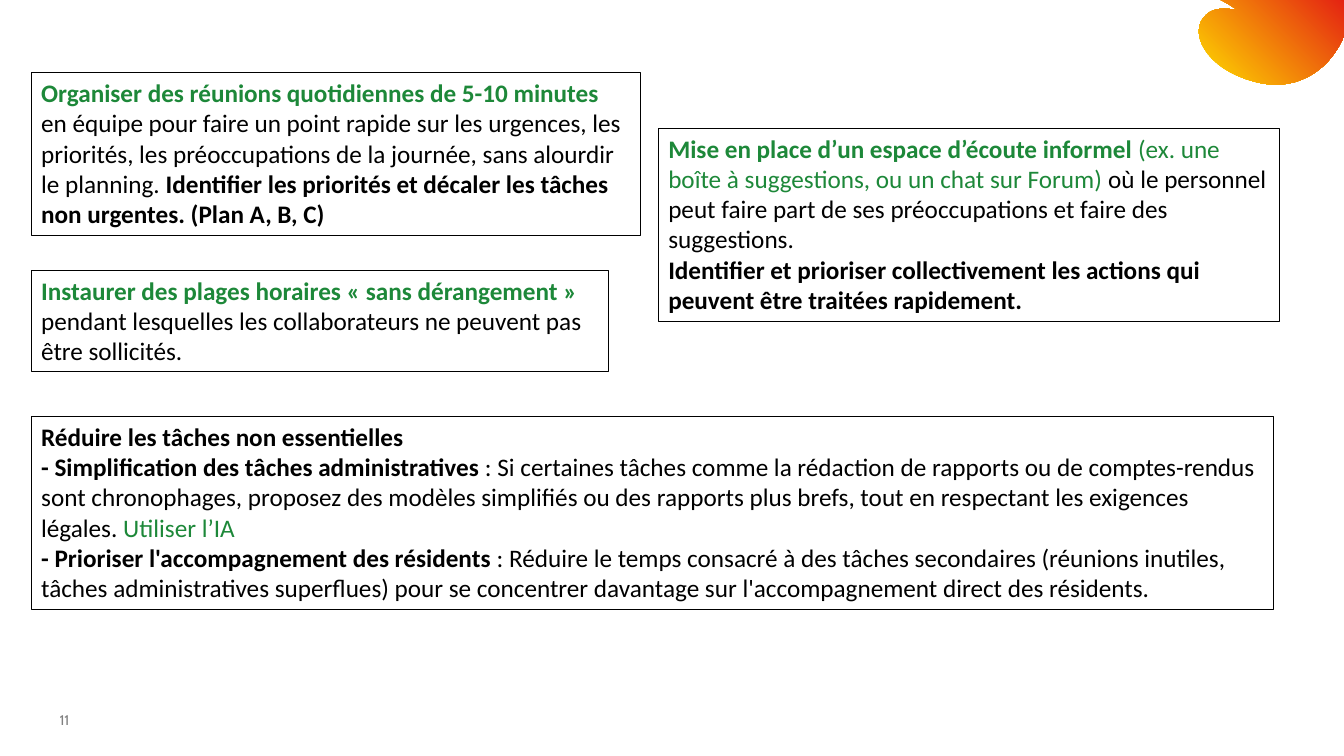
from pptx import Presentation
from pptx import util as u
from pptx.dml.color import RGBColor
from pptx.enum import shapes, text

BLACK = RGBColor(0x00, 0x00, 0x00)
GREEN = RGBColor(0x1D, 0x88, 0x39)
GREY = RGBColor(0x80, 0x80, 0x80)
YELLOW = RGBColor(0xFF, 0xDD, 0x00)
RED = RGBColor(0xE4, 0x23, 0x12)

PLAIN = {"bold": False, "color": BLACK}
STRONG = {"bold": True, "color": BLACK}
GREEN_PLAIN = {"bold": False, "color": GREEN}
GREEN_STRONG = {"bold": True, "color": GREEN}

LEFT = 0.31

# Boxes: position and size, then paragraphs of (text, format)
BOXES = [
    ((LEFT, 0.72, 6.04, 1.62), [
        [("Organiser des réunions quotidiennes de 5-10 minutes", GREEN_STRONG),
         (" en équipe pour faire un point rapide sur les urgences, les priorités, "
          "les préoccupations de la journée, sans alourdir le planning. ", PLAIN),
         ("Identifier les priorités et décaler les tâches non urgentes. "
          "(Plan A, B, C)", STRONG)],
    ]),
    ((LEFT, 4.13, 12.32, 1.92), [
        [("Réduire les tâches non essentielles", STRONG)],
        [("- Simplification des tâches administratives", STRONG),
         (" : Si certaines tâches comme la rédaction de rapports ou de "
          "comptes-rendus sont chronophages, proposez des modèles simplifiés ou des "
          "rapports plus brefs, tout en respectant les exigences légales. ", PLAIN),
         ("Utiliser l’IA", GREEN_PLAIN)],
        [("- Prioriser l'accompagnement des résidents", STRONG),
         (" : Réduire le temps consacré à des tâches secondaires (réunions inutiles, "
          "tâches administratives superflues) pour se concentrer davantage sur "
          "l'accompagnement direct des résidents.", PLAIN)],
    ]),
    ((6.53, 1.27, 6.16, 1.92), [
        [("Mise en place d’un espace d’écoute informel", GREEN_STRONG),
         (" (ex. une boîte à suggestions, ou un chat sur Forum) ", GREEN_PLAIN),
         ("où le personnel peut faire part de ses préoccupations et faire des "
          "suggestions.", PLAIN)],
        [("Identifier et prioriser collectivement les actions qui peuvent être "
          "traitées rapidement.", STRONG)],
    ]),
    ((LEFT, 2.68, 5.73, 1.01), [
        [("Instaurer des plages horaires « sans dérangement » ", GREEN_STRONG),
         ("pendant lesquelles les collaborateurs ne peuvent pas être sollicités.",
          PLAIN)],
    ]),
]

# Corner petal: straight points, then cubic curves (two controls and an end)
PETAL_START = (12.11, 0)
PETAL_EDGE = [(13.33, 0), (13.33, 0.35), (13.31, 0.4)]
PETAL_CURVES = [
    [(13.16, 0.72), (12.83, 0.92), (12.44, 0.81)],
    [(11.95, 0.68), (11.78, 0.31), (11.96, 0.15)],
    [(12.03, 0.08), (12.14, 0.07), (12.32, 0.11)],
    [(12.28, 0.1), (12.24, 0.08), (12.2, 0.05)],
]


def curve_points(start, first, second, end, steps=16):
    """Points along a cubic curve, without its start."""
    points = []
    for step in range(1, steps + 1):
        t = step / steps
        weights = ((1 - t) ** 3, 3 * t * (1 - t) ** 2, 3 * t * t * (1 - t), t ** 3)
        corners = (start, first, second, end)
        points.append(tuple(sum(w * c[axis] for w, c in zip(weights, corners))
                            for axis in (0, 1)))
    return points


class Page:
    """The current slide and its text style."""

    def __init__(self, deck):
        self.shapes = deck.slides.add_slide(deck.slide_layouts[6]).shapes
        self.style = {"name": "Calibri", "size": u.Pt(18)}

    def fill_text(self, frame, paragraphs, frame_format):
        for name, value in frame_format.items():
            setattr(frame, name, value)
        for index, pieces in enumerate(paragraphs):
            para = frame.add_paragraph() if index else frame.paragraphs[0]
            para.alignment = text.PP_ALIGN.LEFT
            for words, look in pieces:
                span = para.add_run()
                span.text = words
                values = {**self.style, **look}
                span.font.color.rgb = values.pop("color")
                for name, value in values.items():
                    setattr(span.font, name, value)

    def box(self, place, paragraphs):
        box = self.shapes.add_shape(shapes.MSO_SHAPE.RECTANGLE, *map(u.Inches, place))
        box.shadow.inherit = False
        box.fill.background()
        box.line.color.rgb = BLACK
        box.line.width = u.Pt(0.75)
        self.fill_text(box.text_frame, paragraphs, {
            "word_wrap": True,
            "vertical_anchor": text.MSO_ANCHOR.TOP,
            "auto_size": text.MSO_AUTO_SIZE.SHAPE_TO_FIT_TEXT,
        })

    def number(self, place, words):
        box = self.shapes.add_textbox(*map(u.Inches, place))
        margins = dict.fromkeys(
            ("margin_left", "margin_top", "margin_right", "margin_bottom"), 0)
        look = {"name": "Cabin", "size": u.Pt(10), "color": GREY}
        self.fill_text(box.text_frame, [[(words, look)]], {
            "word_wrap": True, "vertical_anchor": text.MSO_ANCHOR.BOTTOM, **margins})

    def petal(self, start, edge, curves):
        points = list(edge)
        for curve in curves:
            points += curve_points(points[-1], *curve)
        builder = self.shapes.build_freeform(*map(u.Inches, start))
        builder.add_line_segments(
            [(u.Inches(x), u.Inches(y)) for x, y in points], close=True)
        petal = builder.convert_to_shape()
        petal.shadow.inherit = False
        petal.line.fill.background()
        petal.fill.gradient()
        petal.fill.gradient_angle = 45
        for stop, color in zip(petal.fill.gradient_stops, (YELLOW, RED)):
            stop.color.rgb = color


def main():
    deck = Presentation()
    deck.slide_width, deck.slide_height = u.Inches(13.33), u.Inches(7.5)
    page = Page(deck)

    # Decoration and page number
    page.petal(PETAL_START, PETAL_EDGE, PETAL_CURVES)
    page.number((0.59, 7.09, 0.79, 0.14), "11")

    # Framed texts
    for place, paragraphs in BOXES:
        page.box(place, paragraphs)

    deck.save("out.pptx")


if __name__ == "__main__":
    main()
